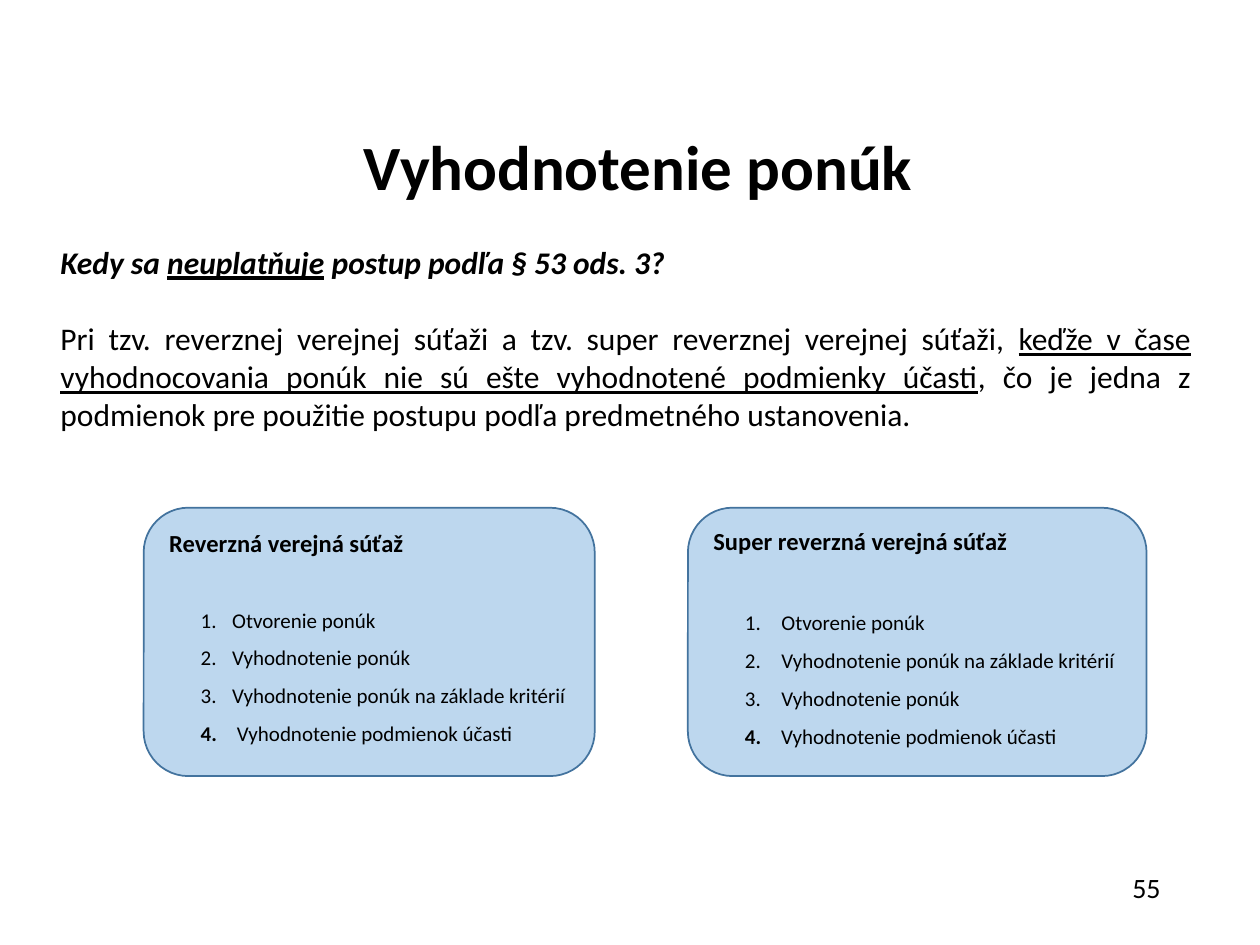
from lxml.etree import SubElement
from pptx import Presentation
from pptx.dml.color import RGBColor
from pptx.enum.shapes import MSO_SHAPE as Shape
from pptx.enum.text import MSO_ANCHOR as Anchor, MSO_AUTO_SIZE as AutoSize, PP_ALIGN as Align
from pptx.oxml.ns import qn
from pptx.util import Inches, Pt

BLACK = RGBColor(0x00, 0x00, 0x00)
CARD_FILL = RGBColor(0xBD, 0xD7, 0xEE)
CARD_LINE = RGBColor(0x43, 0x73, 0x9E)
FONT = "Calibri"

# The page is a grid of 100 columns by 75 rows
WIDTH, HEIGHT = Inches(10), Inches(7.5)
COLUMN, ROW = WIDTH / 100, HEIGHT / 75

CARD_TOP, CARD_ROWS = 40.3, 21.3
OPENING, SCORING = "Otvorenie ponúk", "Vyhodnotenie ponúk"
BY_CRITERIA = "Vyhodnotenie ponúk na základe kritérií"
CONDITIONS = "Vyhodnotenie podmienok účasti"


def cells(left, top, columns, rows):
    """Turn grid units into left, top, width and height."""
    return (int(left * COLUMN), int(top * ROW), int(columns * COLUMN), int(rows * ROW))


def move(box, *area):
    box.left, box.top, box.width, box.height = cells(*area)


def add_span(para, text, size, bold=False, italic=False, underline=False):
    span = para.add_run()
    span.text = text
    font = span.font
    font.name, font.size = FONT, Pt(size)
    font.bold, font.italic, font.underline = bold, italic, underline
    font.color.rgb = BLACK


def set_bullet(para, tag, margin=0, hanging=0, **attributes):
    properties = para._p.get_or_add_pPr()
    properties.set("marL", str(Inches(margin)))
    properties.set("indent", str(-Inches(hanging)))
    SubElement(properties, qn(tag), attributes)


def add_title(page):
    title = page.shapes.title
    move(title, 1.3, 8, 98.7, 11)
    frame = title.text_frame
    frame.auto_size, frame.vertical_anchor = AutoSize.NONE, Anchor.MIDDLE
    para = frame.paragraphs[0]
    para.alignment, para.line_spacing = Align.CENTER, 0.9
    add_span(para, SCORING, 36, bold=True)


def add_body(page):
    body = page.placeholders[1]
    move(body, 3.8, 18.8, 91.7, 29.8)
    frame = body.text_frame
    frame.auto_size, frame.vertical_anchor = AutoSize.NONE, Anchor.TOP
    question, answer = frame.paragraphs[0], frame.add_paragraph()
    for para, gap in ((question, 0), (answer, 22)):
        para.alignment, para.space_before = Align.JUSTIFY, Pt(gap)
        set_bullet(para, "a:buNone")

    add_span(question, "Kedy sa ", 18, bold=True, italic=True)
    add_span(question, "neuplatňuje", 18, bold=True, italic=True, underline=True)
    add_span(question, " postup podľa § 53 ods. 3?", 18, bold=True, italic=True)

    add_span(answer, "Pri tzv. reverznej verejnej súťaži a tzv. super reverznej "
             "verejnej súťaži, ", 18)
    add_span(answer, "keďže v čase vyhodnocovania ponúk nie sú ešte vyhodnotené "
             "podmienky účasti", 18, underline=True)
    add_span(answer, ", čo je jedna z podmienok pre použitie postupu podľa "
             "predmetného ustanovenia.", 18)


def add_card(page, left, columns, heading, steps, inset, gap, margin):
    card = page.shapes.add_shape(
        Shape.ROUNDED_RECTANGLE, *cells(left, CARD_TOP, columns, CARD_ROWS))
    card.shadow.inherit = False
    card.fill.solid()
    card.fill.fore_color.rgb = CARD_FILL
    card.line.color.rgb, card.line.width = CARD_LINE, Pt(1)

    frame = card.text_frame
    frame.word_wrap, frame.vertical_anchor = True, Anchor.TOP
    frame.margin_top = Inches(inset)
    para = frame.paragraphs[0]
    para.alignment = Align.LEFT
    add_span(para, heading, 14, bold=True)

    # Numbered steps; a bold first span makes the last number bold
    for index, step in enumerate(steps):
        is_last = index == len(steps) - 1
        para = frame.add_paragraph()
        para.alignment, para.line_spacing = Align.LEFT, 1.5
        para.space_before = Pt(0 if index else gap)
        indent = 0.5 if is_last else margin
        set_bullet(para, "a:buAutoNum", indent, indent - 0.25, type="arabicPeriod")
        if is_last:
            add_span(para, " ", 12, bold=True)
        add_span(para, step, 12)


def add_page_number(page, number):
    box = page.shapes.add_textbox(*cells(76.8, 68.6, 16.3, 3.7))
    box.text_frame.word_wrap = True
    para = box.text_frame.paragraphs[0]
    para.alignment = Align.RIGHT
    add_span(para, number, 16)


def main():
    deck = Presentation()
    deck.slide_width, deck.slide_height = WIDTH, HEIGHT
    page = deck.slides.add_slide(deck.slide_layouts[1])
    add_title(page)
    add_body(page)
    # The two procedures side by side
    add_card(page, 11.4, 35.8, "Reverzná verejná súťaž",
             (OPENING, SCORING, BY_CRITERIA, CONDITIONS), 0.06, 21, 0.5)
    add_card(page, 54.6, 36.4, "Super reverzná verejná súťaž",
             (OPENING, BY_CRITERIA, SCORING, CONDITIONS), 0.04, 24, 0.54)
    add_page_number(page, "55")
    deck.save("out.pptx")


if __name__ == "__main__":
    main()
